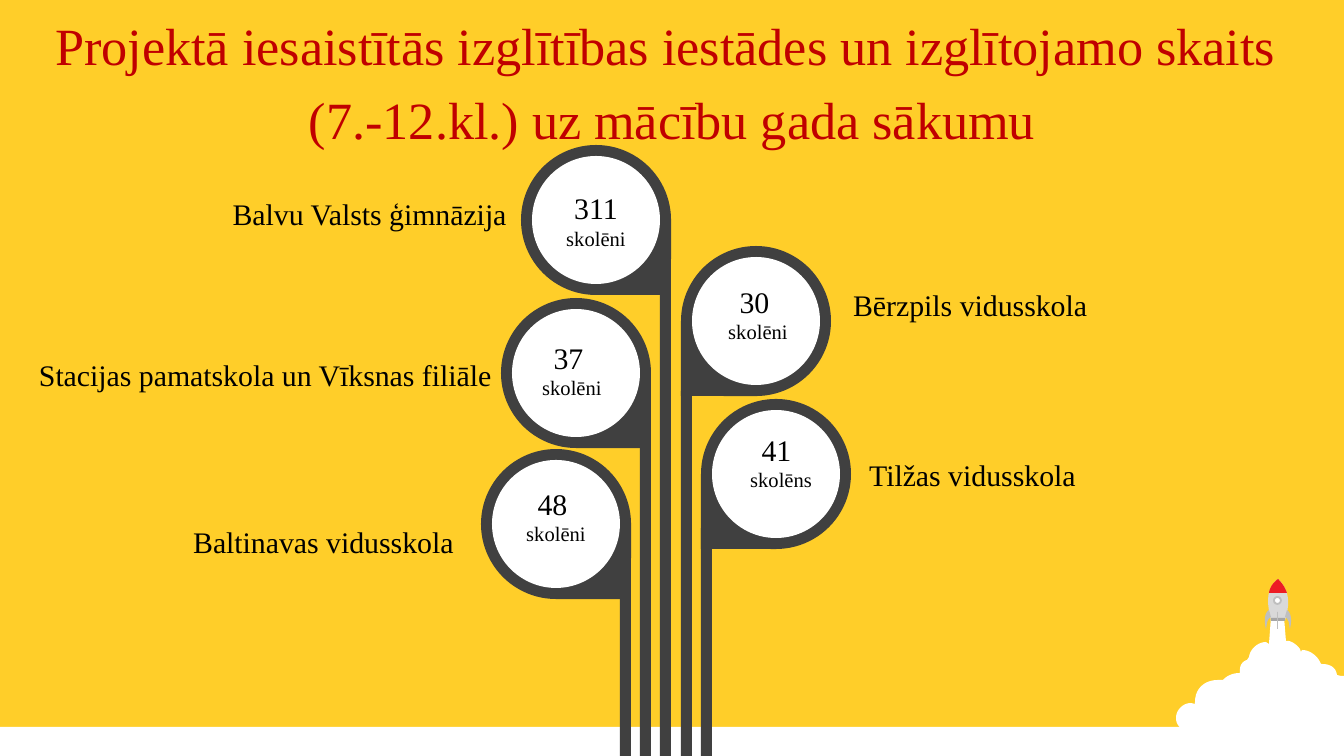
from pptx import Presentation
from pptx.dml.color import RGBColor
from pptx.enum.shapes import MSO_SHAPE as Preset
from pptx.enum.text import MSO_ANCHOR as Anchor, PP_ALIGN as Align
from pptx.util import Emu, Pt

YELLOW = RGBColor(0xFF, 0xCE, 0x29)
WHITE = RGBColor(0xFF, 0xFF, 0xFF)
BLACK = RGBColor(0, 0, 0)
CHARCOAL = RGBColor(0x40, 0x40, 0x40)
CRIMSON = RGBColor(0xC0, 0, 0)
RED = RGBColor(0xED, 0x1C, 0x24)
LIGHT_GREY = RGBColor(0xD9, 0xD9, 0xD9)
GREY = RGBColor(0xBF, 0xBF, 0xBF)
MID_GREY = RGBColor(0xA6, 0xA6, 0xA6)
FONT = "Times New Roman"

WIDTH, HEIGHT = 1344, 756
EMU_PER_PX = 914400 * 10 / WIDTH
STEM, DROP, RIM = 11, 150, 11
COUNT_WIDTH, COUNT_HEIGHT = 99, 75
LABEL_HEIGHT = 50

TITLE = ["Projektā iesaistītās izglītības iestādes un izglītojamo skaits ",
         "(7.-12.kl.) uz mācību gada sākumu"]

# side, stem x, drop top, stem top, count, unit, count corner (None: in the circle),
# school, label left, label top, label width
SCHOOLS = [
    ("left", 660, 145, 280, "311", "skolēni", None,
     "Balvu Valsts ģimnāzija", 65, 189, 455),
    ("left", 640, 298, 391, "37", "skolēni", (519, 333),
     "Stacijas pamatskola un Vīksnas filiāle", 0, 350, 505),
    ("left", 620, 449, 528, "48", "skolēni", (503, 479),
     "Baltinavas vidusskola", 59, 517, 408),
    ("right", 681, 246, 391, "30", "skolēni", (705, 277),
     "Bērzpils vidusskola", 840, 280, 374),
    ("right", 701, 399, 528, "41", "skolēns", (727, 425),
     "Tilžas vidusskola", 856, 450, 374),
]

# Outlines: a pair is a straight step, six numbers are a Bézier curve
CLOUD = [
    (1271, 617), (1284, 617), (1286, 641), (1289, 641),
    (1293, 642, 1297, 645, 1300, 649), (1301, 652), (1302, 650),
    (1310, 650, 1318, 656, 1321, 664), (1322, 664),
    (1331, 664, 1336, 668, 1337, 675), (1341, 676), (1344, 676),
    (1344, 754), (1191, 754), (1191, 732),
    (1183, 732, 1176, 726, 1176, 718), (1176, 710, 1183, 703, 1191, 703),
    (1195, 704), (1195, 702), (1195, 689, 1204, 680, 1218, 680),
    (1223, 680), (1224, 679), (1228, 675, 1234, 673, 1240, 673),
    (1240, 669), (1240, 665, 1243, 661, 1247, 660), (1249, 657),
    (1250, 649, 1258, 642, 1266, 642), (1269, 644),
]
ROCKET_BODY = [(1271, 621), (1269, 609, 1263, 591, 1278, 579),
               (1293, 593, 1288, 610, 1285, 621)]
NOSE = [(1278, 579), (1282, 583, 1285, 587, 1287, 593), (1269, 593),
        (1270, 587, 1273, 583, 1278, 579)]
LEFT_FIN = [(1269, 610), (1271, 617), (1266, 620, 1267, 626, 1266, 629),
            (1265, 625, 1263, 614, 1269, 610)]
RIGHT_FIN = [tuple(2556 - value if index % 2 == 0 else value
                   for index, value in enumerate(step)) for step in LEFT_FIN]


def px(value):
    return Emu(round(value * EMU_PER_PX))


def paint(shape, color):
    shape.shadow.inherit = False
    shape.fill.solid()
    shape.fill.fore_color.rgb = color
    shape.line.fill.background()
    return shape


def add_preset(preset, box, color):
    return paint(slide.shapes.add_shape(preset, *map(px, box)), color)


def add_outline(steps, color):
    points = []
    for step in steps:
        if len(step) == 2:
            points.append(step)
            continue
        (x0, y0), (x1, y1, x2, y2, x3, y3) = points[-1], step
        for t in (n / 10 for n in range(1, 11)):
            a, b, c, d = (1 - t) ** 3, 3 * t * (1 - t) ** 2, 3 * t * t * (1 - t), t ** 3
            points.append((a * x0 + b * x1 + c * x2 + d * x3,
                           a * y0 + b * y1 + c * y2 + d * y3))
    corners = [(px(x), px(y)) for x, y in points]
    builder = slide.shapes.build_freeform(*corners[0])
    builder.add_line_segments(corners[1:], close=True)
    return paint(builder.convert_to_shape(), color)


def write(frame, lines, sizes, color=BLACK, align=Align.CENTER):
    frame.word_wrap = True
    frame.text = "\n".join(lines)
    for paragraph, size in zip(frame.paragraphs, sizes):
        paragraph.alignment = align
        font = paragraph.runs[0].font
        font.name, font.size, font.color.rgb = FONT, Pt(size), color


def add_text(box, *args, **options):
    frame = slide.shapes.add_textbox(*map(px, box)).text_frame
    write(frame, *args, **options)
    return frame


presentation = Presentation()
presentation.slide_width, presentation.slide_height = px(WIDTH), px(HEIGHT)
slide = presentation.slides.add_slide(presentation.slide_layouts[6])
slide.background.fill.solid()
slide.background.fill.fore_color.rgb = YELLOW

# Ground and rocket
add_preset(Preset.RECTANGLE, (0, 727, WIDTH, HEIGHT - 727), WHITE)
add_outline(CLOUD, WHITE)
add_outline(ROCKET_BODY, LIGHT_GREY)
add_preset(Preset.RECTANGLE, (1271, 618, 14, 3), MID_GREY)
add_outline(NOSE, RED)
porthole = add_preset(Preset.OVAL, (1274, 597, 7, 7), WHITE)
porthole.line.color.rgb = GREY
porthole.line.width = Pt(1)
add_preset(Preset.RECTANGLE, (1277, 612, 1, 17), GREY)
for fin in (LEFT_FIN, RIGHT_FIN):
    add_outline(fin, GREY)

# Title
title = add_text((0, 20, WIDTH, 124), TITLE, (28, 28), color=CRIMSON)
title.vertical_anchor = Anchor.MIDDLE
for paragraph in title.paragraphs:
    paragraph.space_before = Pt(6)

# Schools: drop, circle, stem, count and name
for (side, stem_x, top, stem_top, count, unit, count_corner,
     school, label_x, label_y, label_width) in SCHOOLS:
    on_left = side == "left"
    drop_x = stem_x + STEM - DROP if on_left else stem_x
    drop = add_preset(Preset.TEAR, (drop_x, top, DROP, DROP), CHARCOAL)
    drop.rotation = 90 if on_left else 180
    inner = DROP - 2 * RIM
    circle = add_preset(Preset.OVAL, (drop_x + RIM, top + RIM, inner, inner), WHITE)
    add_preset(Preset.RECTANGLE, (stem_x, stem_top, STEM, HEIGHT - stem_top), CHARCOAL)

    if count_corner:
        frame = add_text((*count_corner, COUNT_WIDTH, COUNT_HEIGHT),
                         (count, unit), (16, 11))
        frame.margin_right = frame.margin_left
        unit_line = frame.paragraphs[1]
        unit_line.alignment = Align.LEFT
        unit_line._p.get_or_add_pPr().set("marL", str(px(10)))
    else:
        write(circle.text_frame, (count, unit), (16, 11))
        circle.text_frame.vertical_anchor = Anchor.MIDDLE

    add_text((label_x, label_y, label_width, LABEL_HEIGHT), [school], [16],
             align=Align.RIGHT if on_left else Align.LEFT)

presentation.save("out.pptx")
